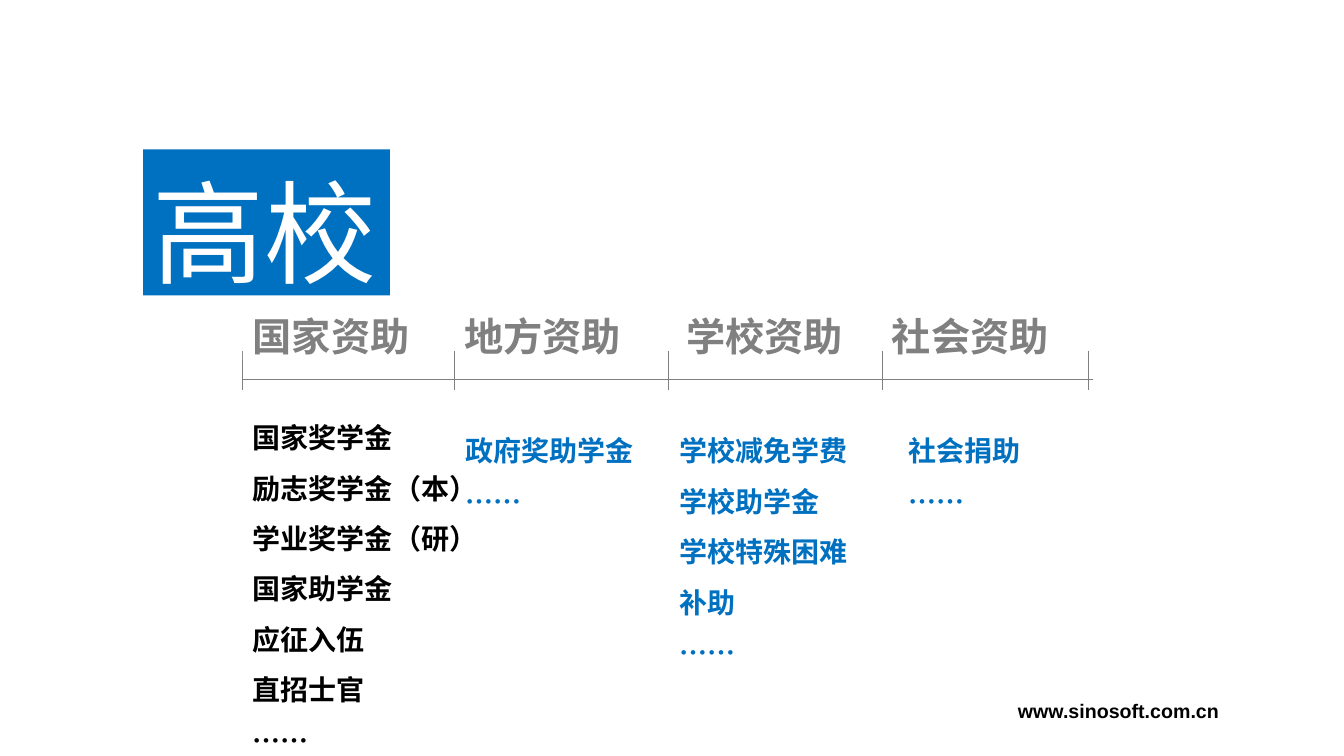
import pptx
import pptx.dml.color
import pptx.enum.shapes
import pptx.enum.text
import pptx.oxml.ns
import pptx.util
from lxml import etree

Pt = pptx.util.Pt
qn = pptx.oxml.ns.qn

COLORS = {"blue": "0070C0", "gray": "808080", "axis": "7F7F7F",
          "black": "000000", "white": "FFFFFF"}
CJK = "Noto Sans CJK SC"

AXIS_Y = 271.4
TICKS = [(173.5, "gray"), (324.7, "gray"), (477.4, "axis"),
         (630.7, "axis"), (777.6, "axis")]

# Heading, its left; list left, top, width, height, colour, lines
COLUMNS = [
    ("国家资助", 173.5, (173.5, 281.5, 181.4, 257.8), "black",
     ["国家奖学金", "励志奖学金（本）", "学业奖学金（研）", "国家助学金",
      "应征入伍", "直招士官", "……"]),
    ("地方资助", 324.7, (325.4, 290.9, 135.4, 79.9), "blue",
     ["政府奖助学金", "……"]),
    ("学校资助", 483.1, (478.1, 290.9, 147.6, 188.6), "blue",
     ["学校减免学费", "学校助学金", "学校特殊困难补助", "……"]),
    ("社会资助", 630, (641.5, 290.9, 147.6, 79.9), "blue",
     ["社会捐助", "……"]),
]


def rgb(name):
    return pptx.dml.color.RGBColor.from_string(COLORS[name])


def add_line(s, x1, y1, x2, y2, color):
    line = s.shapes.add_connector(
        pptx.enum.shapes.MSO_CONNECTOR.STRAIGHT, Pt(x1), Pt(y1), Pt(x2), Pt(y2))
    line.line.color.rgb = rgb(color)
    line.line.width = Pt(0.75)
    etree.SubElement(line._element.spPr, qn("a:effectLst"))


def write(sp, lines, size, color, font=CJK, bold=True, wrap=False,
          spacing=None, top=3.6):
    tf = sp.text_frame
    tf.word_wrap = wrap
    tf.vertical_anchor = pptx.enum.text.MSO_ANCHOR.TOP
    tf.margin_top, tf.margin_bottom = Pt(top), 0
    for i, line in enumerate(lines):
        p = tf.paragraphs[0] if i == 0 else tf.add_paragraph()
        p.alignment = pptx.enum.text.PP_ALIGN.LEFT
        if spacing:
            p.line_spacing = Pt(spacing)
        r = p.add_run()
        r.text = line
        r.font.size = Pt(size)
        r.font.bold = bold
        r.font.color.rgb = rgb(color)
        r.font.name = font
        # East Asian typeface
        etree.SubElement(r.font._element, qn("a:ea"), typeface=CJK)


def add_text(s, box, lines, size, color, **style):
    sp = s.shapes.add_textbox(*map(Pt, box))
    write(sp, lines, size, color, **style)


def add_block(s, box, fill, lines, size, color, **style):
    sp = s.shapes.add_shape(
        pptx.enum.shapes.MSO_SHAPE.RECTANGLE, *map(Pt, box))
    sp.shadow.inherit = False
    sp.fill.solid()
    sp.fill.fore_color.rgb = rgb(fill)
    sp.line.fill.background()
    write(sp, lines, size, color, **style)


def main():
    prs = pptx.Presentation()
    prs.slide_width, prs.slide_height = Pt(960), Pt(540)
    s = prs.slides.add_slide(prs.slide_layouts[6])

    # Footer address
    add_text(s, (720, 495.4, 159.1, 24.5), ["www.sinosoft.com.cn"],
             14, "black", font="Arial")

    # Axis with ticks
    add_line(s, TICKS[0][0], AXIS_Y, 780.5, AXIS_Y, "axis")
    for x, color in TICKS:
        add_line(s, x, 250.6, x, 278.6, color)

    # Headings: the first one covers the top of its tick
    for i, (heading, left, *_) in enumerate(COLUMNS):
        box = (left, 216.7, 127.4, 41)
        style = {"spacing": 34, "top": 6}
        if i == 0:
            add_block(s, box, "white", [heading], 28, "gray", **style)
        else:
            add_text(s, box, [heading], 28, "gray", **style)

    # Lists under the axis
    for _, _, box, color, lines in COLUMNS:
        add_text(s, box, lines, 20, color, wrap=True, spacing=36, top=7)

    # Title block
    add_block(s, (102.2, 106.6, 176.4, 104.4), "blue", ["高校"], 80, "white",
              font="Times New Roman", bold=False, spacing=96, top=10)

    prs.save("out.pptx")


if __name__ == "__main__":
    main()
